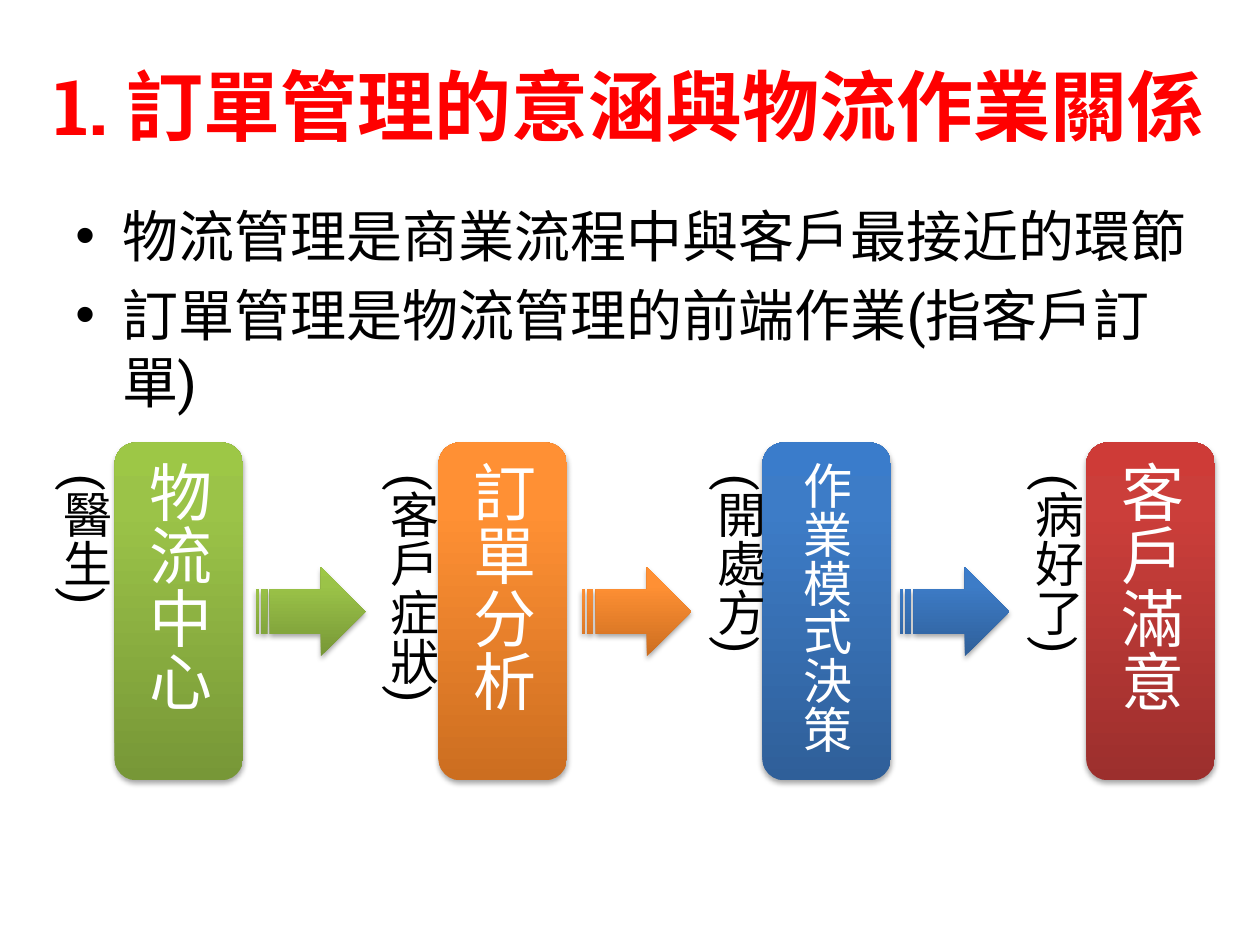
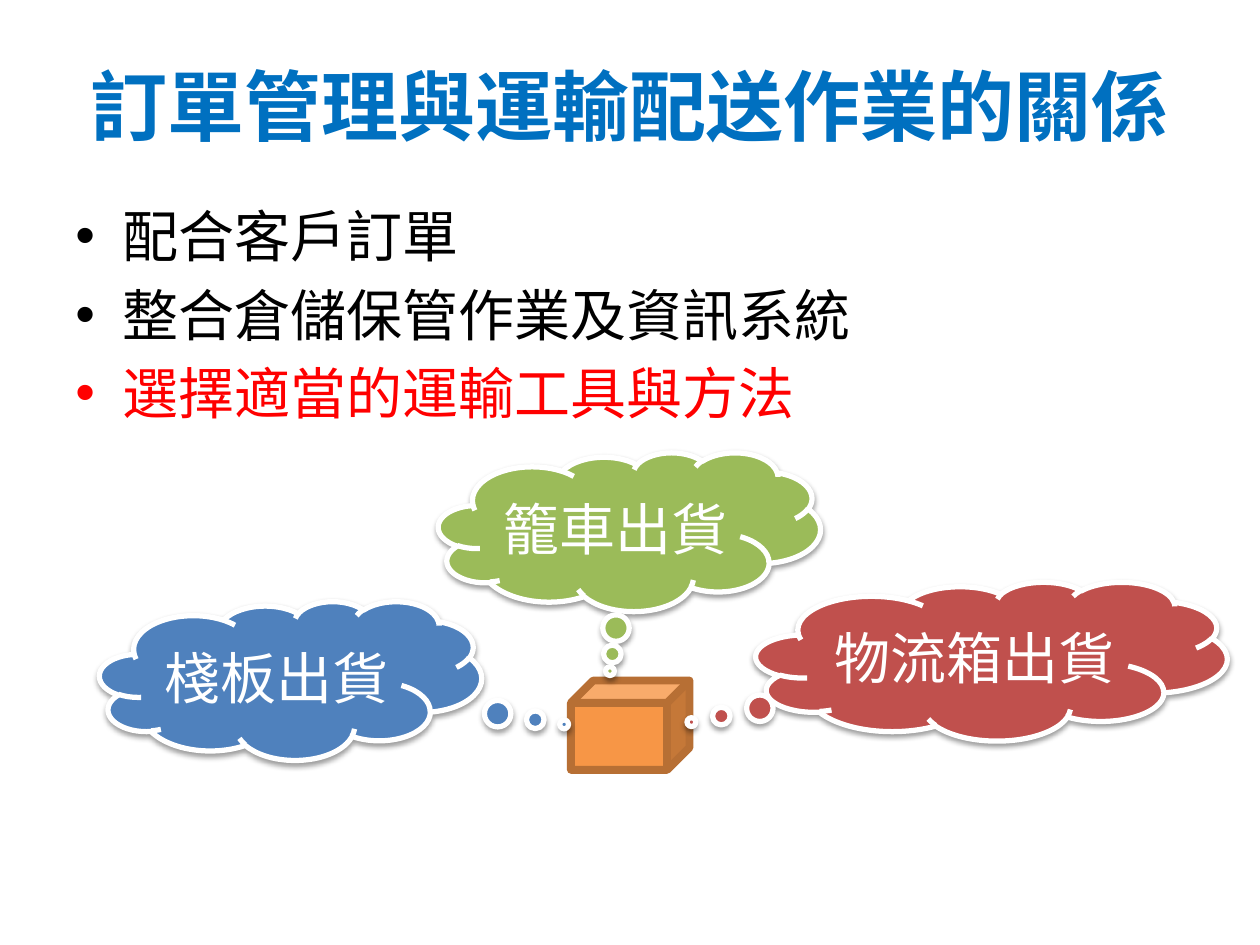
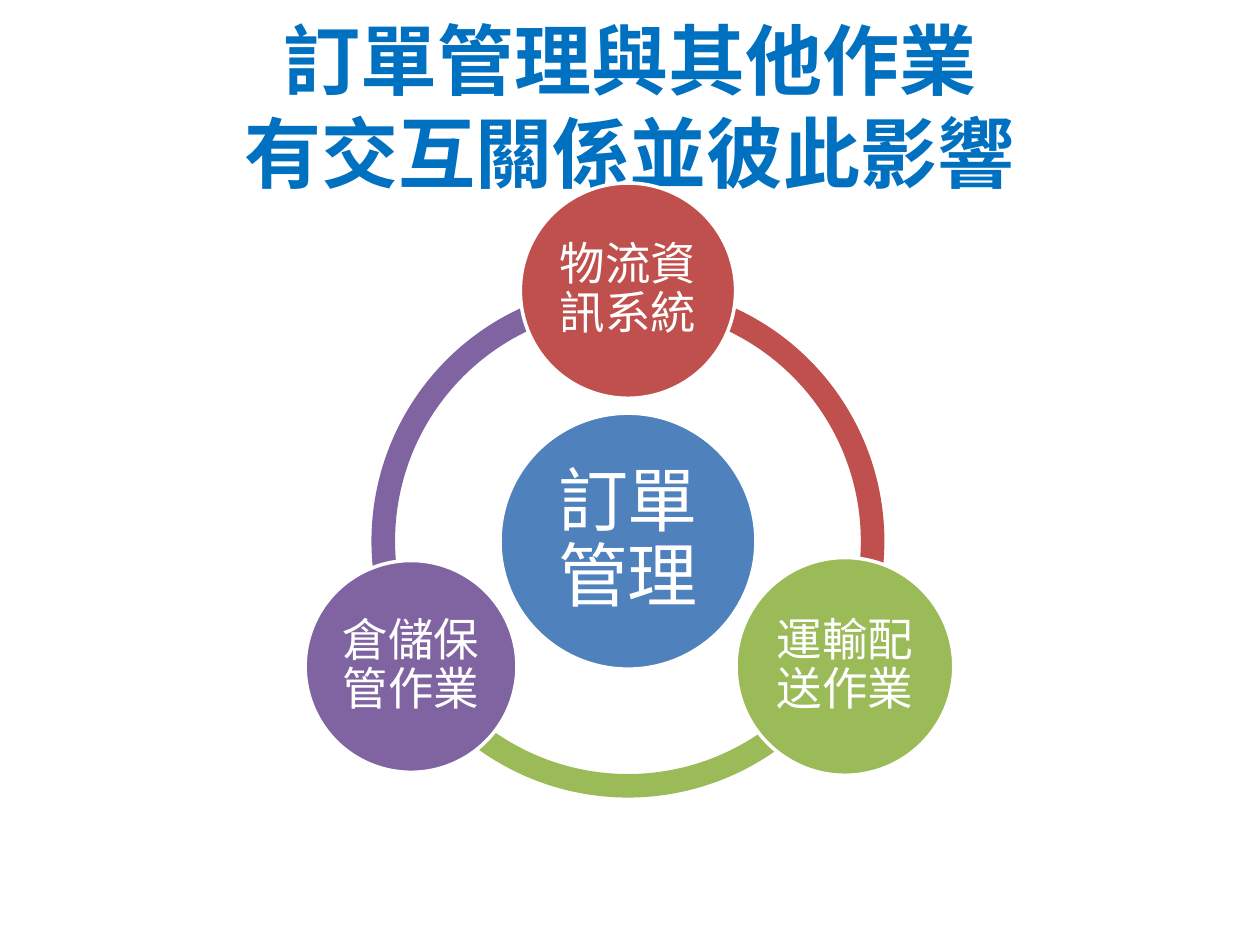
from copy import deepcopy
from dataclasses import dataclass
from math import cos, radians, sin

from lxml.etree import SubElement
from pptx import Presentation
from pptx.dml.color import RGBColor
from pptx.enum.shapes import MSO_SHAPE
from pptx.enum.text import MSO_ANCHOR, MSO_AUTO_SIZE, PP_ALIGN
from pptx.oxml.ns import qn
from pptx.shapes.autoshape import Shape
from pptx.slide import Slide
from pptx.text.text import TextFrame
from pptx.util import Cm, Pt


@dataclass(frozen=True)
class Theme:
    font: str = "Roboto Slab"
    black: str = "000000"
    white: str = "FFFFFF"
    red: str = "FF0000"
    title_blue: str = "0070C0"
    blue: str = "4F81BD"
    crimson: str = "C0504D"
    green: str = "9BBB59"
    purple: str = "8064A2"
    orange: str = "F79646"
    brown: str = "B76F34"
    title_size: int = 44
    hub_size: int = 40
    pillar_size: int = 36
    body_size: int = 32
    caption_size: int = 28
    circle_size: int = 26


THEME = Theme()
GRADIENT_POSITIONS = (0, 0.8, 1)


@dataclass(frozen=True)
class Box:
    """Left, top, width and height in centimetres."""
    left: float
    top: float
    width: float
    height: float

    def lengths(self) -> tuple[Cm, Cm, Cm, Cm]:
        return Cm(self.left), Cm(self.top), Cm(self.width), Cm(self.height)


@dataclass(frozen=True)
class Step:
    name: str
    caption: str
    caption_left: float
    gradient: tuple[str, str, str]
    arrow_left: float | None = None
    size: int = THEME.pillar_size


@dataclass(frozen=True)
class Cloud:
    text: str
    box: Box
    tail: tuple[float, float]
    color: str


@dataclass(frozen=True)
class Satellite:
    text: str
    angle: int
    diameter: float
    color: str


TITLE_BOX = Box(1.27, 0.53, 22.86, 3.18)
BODY_BOX = Box(1.27, 3.94, 22.86, 12.57)

STEPS = (
    Step("物流中心", "(醫生)", 0.76, ("779737", "9BC348", "9DC746"), 5.16),
    Step("訂單分析", "(客戶症狀)", 7.34, ("CC6E20", "FF9034", "FF9136"), 11.73),
    Step("作業模式決策", "(開處方)", 13.94, ("2F5F99", "3D7CC7", "3A7CCB"), 18.14,
         THEME.caption_size),
    Step("客戶滿意", "(病好了)", 20.35, ("9C2F2D", "CB3E3A", "CE3B37")),
)
PILLAR_LEFT, PILLAR_PITCH = 2.31, 6.53

CLOUDS = (
    Cloud("棧板出貨", Box(2.01, 12.12, 7.7, 3.2), (0.716, 0.276), THEME.blue),
    Cloud("籠車出貨", Box(8.84, 9.12, 7.7, 3.2), (-0.051, 0.878), THEME.green),
    Cloud("物流箱出貨", Box(15.24, 11.73, 9.5, 3.2), (-0.637, 0.384), THEME.crimson),
)

SATELLITES = (
    Satellite("物流資訊系統", 270, 4.34, THEME.crimson),
    Satellite("運輸配送作業", 30, 4.39, THEME.green),
    Satellite("倉儲保管作業", 150, 4.27, THEME.purple),
)
HUB_X, HUB_Y = 12.66, 10.91
HUB_DIAMETER, ORBIT_RADIUS, RING_DIAMETER = 5.16, 5.05, 10.34
ARC_SPAN = 120


def write_paragraph(frame: TextFrame, text: str, size: int, color: str, *, first: bool = True,
                    align: PP_ALIGN = PP_ALIGN.CENTER, bold: bool = False,
                    bullet: bool = False) -> None:
    paragraph = frame.paragraphs[0] if first else frame.add_paragraph()
    for index, line in enumerate(text.splitlines()):
        if index:
            paragraph.add_line_break()
        paragraph.add_run().text = line
    paragraph.alignment = align
    if not first:
        paragraph.space_before = Pt(0.2 * size)
    if bullet:
        properties = paragraph._p.get_or_add_pPr()
        properties.set("marL", str(Cm(0.95)))
        properties.set("indent", str(-Cm(0.95)))
        SubElement(properties, qn("a:buFont")).set("typeface", "Arial")
        SubElement(properties, qn("a:buChar")).set("char", "•")
    font = paragraph.font
    font.name, font.size, font.bold = THEME.font, Pt(size), bold
    font.color.rgb = RGBColor.from_string(color)


def add_text_box(slide: Slide, box: Box) -> TextFrame:
    frame = slide.shapes.add_textbox(*box.lengths()).text_frame
    frame.word_wrap = True
    return frame


def add_title(slide: Slide, text: str, color: str, box: Box = TITLE_BOX) -> None:
    frame = add_text_box(slide, box)
    frame.vertical_anchor = MSO_ANCHOR.MIDDLE
    write_paragraph(frame, text, THEME.title_size, color, bold=True)


def add_bullets(slide: Slide, lines: dict[str, str], box: Box = BODY_BOX) -> None:
    """Draw a bulleted list from a mapping of line to colour."""
    frame = add_text_box(slide, box)
    for index, (line, color) in enumerate(lines.items()):
        write_paragraph(frame, line, THEME.body_size, color, first=index == 0,
                        align=PP_ALIGN.LEFT, bullet=True)


def add_figure(slide: Slide, kind: MSO_SHAPE, box: Box, fill: str | tuple[str, str, str],
               line: str | None = None, line_width: float = 0) -> Shape:
    """Draw a preset shape with a plain fill, or a gradient rising from the bottom."""
    shape = slide.shapes.add_shape(kind, *box.lengths())
    shape.shadow.inherit = False
    if isinstance(fill, str):
        shape.fill.solid()
        shape.fill.fore_color.rgb = RGBColor.from_string(fill)
    else:
        shape.fill.gradient()
        shape.fill.gradient_angle = 90
        stop_list = shape._element.spPr.find(".//" + qn("a:gsLst"))
        stop_list.append(deepcopy(stop_list[0]))
        for stop, position, color in zip(shape.fill.gradient_stops, GRADIENT_POSITIONS, fill):
            stop.position = position
            stop.color.rgb = RGBColor.from_string(color)
    if line:
        shape.line.color.rgb = RGBColor.from_string(line)
        shape.line.width = Pt(line_width)
    else:
        shape.line.fill.background()
    return shape


def add_shadow(shape: Shape, opacity: int, distance: float) -> None:
    effects = shape._element.spPr.find(qn("a:effectLst"))
    shadow = SubElement(effects, qn("a:outerShdw"), blurRad=str(Pt(3.1)), dist=str(Pt(distance)),
                        dir="5400000", rotWithShape="0")
    color = SubElement(shadow, qn("a:srgbClr"), val=THEME.black)
    SubElement(color, qn("a:alpha"), val=str(opacity * 1000))


def label(shape: Shape, text: str, size: int) -> TextFrame:
    frame = shape.text_frame
    frame.word_wrap = True
    frame.vertical_anchor = MSO_ANCHOR.MIDDLE
    write_paragraph(frame, text, size, THEME.white)
    return frame


def make_vertical(frame: TextFrame) -> None:
    frame._txBody.bodyPr.set("vert", "eaVert")


def add_circle(slide: Slide, x: float, y: float, diameter: float, color: str,
               text: str, size: int, inset: float) -> None:
    box = Box(x - diameter / 2, y - diameter / 2, diameter, diameter)
    circle = add_figure(slide, MSO_SHAPE.OVAL, box, color, THEME.white, 2)
    frame = label(circle, text, size)
    frame.margin_left = frame.margin_right = Cm(inset)
    frame.margin_top = frame.margin_bottom = Cm(inset)
    frame.paragraphs[0].line_spacing = 0.9


def build_process_slide(slide: Slide) -> None:
    add_title(slide, "1. 訂單管理的意涵與物流作業關係", THEME.red, Box(0, 0.53, 25.4, 3.18))
    add_bullets(slide, {
        "物流管理是商業流程中與客戶最接近的環節": THEME.black,
        "訂單管理是物流管理的前端作業(指客戶訂單)": THEME.black,
    }, Box(1.27, 3.94, 23.42, 12.57))
    for index, step in enumerate(STEPS):
        box = Box(PILLAR_LEFT + index * PILLAR_PITCH, 8.92, 2.59, 6.81)
        pillar = add_figure(slide, MSO_SHAPE.ROUNDED_RECTANGLE, box, step.gradient)
        add_shadow(pillar, 35, 1.8)
        make_vertical(label(pillar, step.name, step.size))
    for step in STEPS:
        if step.arrow_left is not None:
            arrow = add_figure(slide, MSO_SHAPE.STRIPED_RIGHT_ARROW,
                               Box(step.arrow_left, 11.43, 2.21, 1.8), step.gradient)
            add_shadow(arrow, 35, 1.8)
    for step in STEPS:
        frame = add_text_box(slide, Box(step.caption_left, 9.32, 1.7, 5.99))
        frame.auto_size = MSO_AUTO_SIZE.SHAPE_TO_FIT_TEXT
        make_vertical(frame)
        write_paragraph(frame, step.caption, THEME.caption_size, THEME.black)


def build_transport_slide(slide: Slide) -> None:
    add_title(slide, "訂單管理與運輸配送作業的關係", THEME.title_blue)
    add_bullets(slide, {
        "配合客戶訂單": THEME.black,
        "整合倉儲保管作業及資訊系統": THEME.black,
        "選擇適當的運輸工具與方法": THEME.red,
    })
    add_figure(slide, MSO_SHAPE.CUBE, Box(11.51, 13.72, 2.39, 1.8), THEME.orange,
               THEME.brown, 4.5)
    for cloud in CLOUDS:
        shape = add_figure(slide, MSO_SHAPE.CLOUD_CALLOUT, cloud.box, cloud.color, THEME.white, 3)
        shape.adjustments[0], shape.adjustments[1] = cloud.tail
        add_shadow(shape, 38, 1.6)
        label(shape, cloud.text, THEME.body_size)


def build_relation_slide(slide: Slide) -> None:
    add_title(slide, "訂單管理與其他作業\n有交互關係並彼此影響", THEME.title_blue)
    ring_box = Box(HUB_X - RING_DIAMETER / 2, HUB_Y - RING_DIAMETER / 2,
                   RING_DIAMETER, RING_DIAMETER)
    for satellite in reversed(SATELLITES):
        arc = add_figure(slide, MSO_SHAPE.BLOCK_ARC, ring_box, satellite.color)
        end_angle = (satellite.angle + ARC_SPAN) % 360
        # One degree is 60000 units, and an adjustment counts 100000 units.
        arc.adjustments[0] = satellite.angle * 0.6
        arc.adjustments[1] = end_angle * 0.6
        arc.adjustments[2] = 0.046
    add_circle(slide, HUB_X, HUB_Y, HUB_DIAMETER, THEME.blue, "訂單管理", THEME.hub_size, 0.15)
    for satellite in SATELLITES:
        angle = radians(satellite.angle)
        add_circle(slide, HUB_X + ORBIT_RADIUS * cos(angle), HUB_Y + ORBIT_RADIUS * sin(angle),
                   satellite.diameter, satellite.color, satellite.text, THEME.circle_size, 0.1)


def main() -> None:
    presentation = Presentation()
    presentation.slide_width, presentation.slide_height = Cm(25.4), Cm(19.05)
    blank_layout = presentation.slide_layouts[6]
    for build in (build_process_slide, build_transport_slide, build_relation_slide):
        build(presentation.slides.add_slide(blank_layout))
    presentation.save("out.pptx")


if __name__ == "__main__":
    main()
